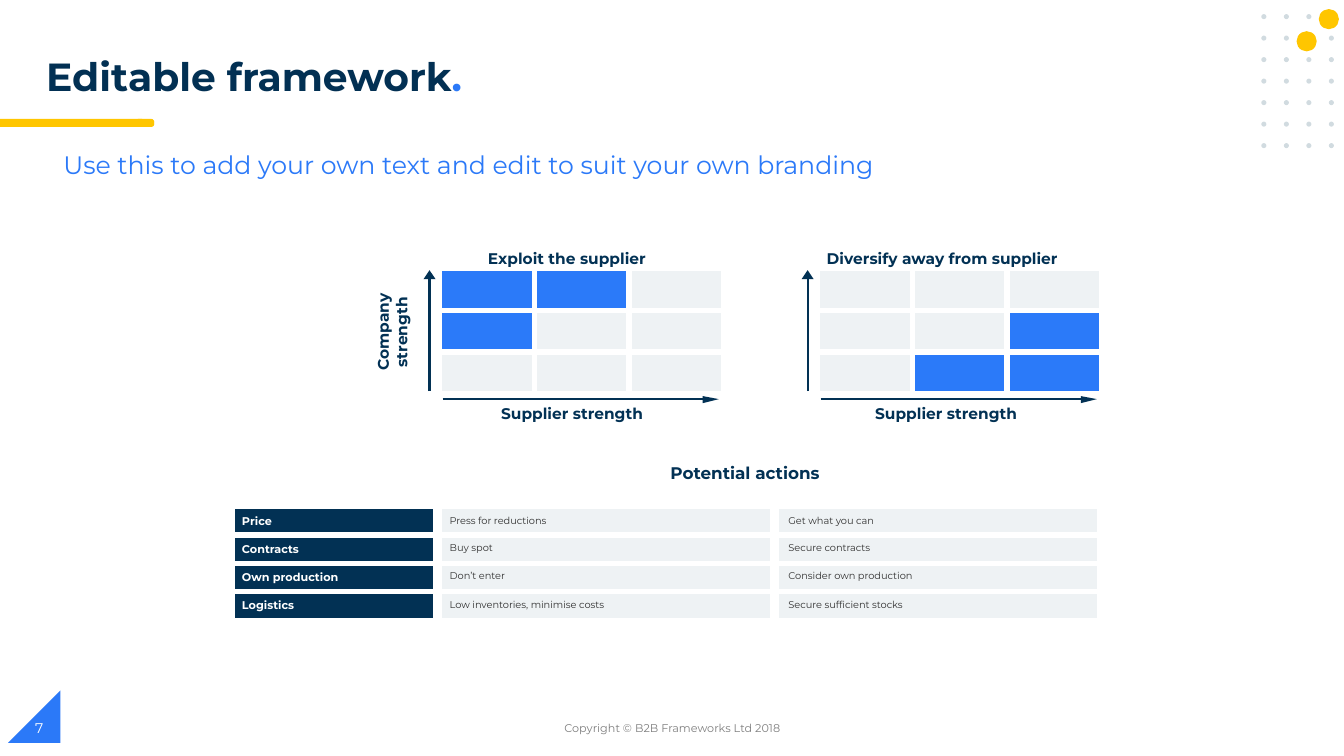
from lxml import etree
from pptx import Presentation
from pptx.dml.color import RGBColor
from pptx.enum.shapes import MSO_CONNECTOR as Conn, MSO_SHAPE as Kind
from pptx.enum.text import MSO_ANCHOR as Anchor, PP_ALIGN as Align
from pptx.oxml import parse_xml
from pptx.oxml.ns import nsdecls, qn
from pptx.util import Inches, Pt

NAVY = RGBColor(0x02, 0x31, 0x54)
INK = RGBColor(0x02, 0x30, 0x53)
BLUE = RGBColor(0x2B, 0x79, 0xF8)
CELL = RGBColor(0x2B, 0x7A, 0xF9)
PALE = RGBColor(0xEE, 0xF2, 0xF4)
GOLD = RGBColor(0xFF, 0xC6, 0x00)
DOT = RGBColor(0xD1, 0xDB, 0xE0)
GREY = RGBColor(0x7F, 0x7F, 0x7F)
DARK = RGBColor(0x33, 0x33, 0x33)
WHITE = RGBColor(0xFF, 0xFF, 0xFF)
FONT = "Montserrat"

# Content
HEAD = {"size": Pt(28), "bold": True}
LABEL = {"size": Pt(11), "bold": True}
PAD = (0.1, 0.05, 0.1, 0.05)
SLIM = (0.01, 0.01, 0, 0)
# runs, box, insets, font values, frame and paragraph values
TEXTS = [
    ([("Editable framework", INK), (".", BLUE)], (0.36, 0.52, 5.64, 0.6),
     PAD, HEAD, {}, {"line_spacing": 0.9}),
    ([("Copyright © B2B Frameworks Ltd 2018", GREY)], (4.42, 7.02, 4.5, 0.4),
     PAD, {"size": Pt(8)}, {"vertical_anchor": Anchor.MIDDLE},
     {"alignment": Align.CENTER}),
    ([("7", WHITE)], (0.25, 7.02, 3, 0.4),
     PAD, {"size": Pt(10)}, {"vertical_anchor": Anchor.MIDDLE}, {}),
    ([("Use this to add your own text and edit to suit your own branding", BLUE)],
     (0.53, 1.43, 8.59, 0.48), PAD, {"size": Pt(18)}, {}, {}),
    ([("Potential actions", NAVY)], (6.64, 4.58, 1.78, 0.21),
     SLIM, {"size": Pt(12), "bold": True}, {}, {}),
]
# left edge, heading and its box, left of axis label, filled cells by row
GRIDS = [
    (4.38, "Exploit the supplier", (4.83, 2.46, 1.83, 0.19), 4.96,
     ("XX.", "X..", "...")),
    (8.13, "Diversify away from supplier", (8.19, 2.46, 2.67, 0.19), 8.67,
     ("...", "..X", ".XX")),
]
AXIS = "Supplier strength"
SIDE = "Company strength"
# left edge, width, indent, fill, font values, rows
LISTS = [
    (2.32, 1.98, 0.08, NAVY, {"size": Pt(8), "bold": True, "color": WHITE},
     ["Price", "Contracts", "Own production", "Logistics"]),
    (4.38, 3.26, 0.08, PALE, {"size": Pt(7), "color": DARK},
     ["Press for reductions", "Buy spot", "Don’t enter",
      "Low inventories, minimise costs"]),
    (7.72, 3.17, 0.1, PALE, {"size": Pt(7), "color": DARK},
     ["Get what you can", "Secure contracts", "Consider own production",
      "Secure sufﬁcient stocks"]),
]
GRID_TOP, LIST_TOP = 2.68, 5.04
GRID_COLS, GRID_ROWS = (0.92, 0.94, 0.92), (0.4, 0.41, 0.4)
LIST_ROWS = (0.27, 0.28, 0.28, 0.27)

deck = Presentation()
deck.slide_width, deck.slide_height = Inches(13.33), Inches(7.5)
slide = deck.slides.add_slide(deck.slide_layouts[6])
shapes = slide.shapes


def style(font, vals):
    font.name = FONT
    for key, val in vals.items():
        if key == "color":
            font.color.rgb = val
        else:
            setattr(font, key, val)


def paint(item, fill):
    item.shadow.inherit = False
    item.fill.solid()
    item.fill.fore_color.rgb = fill
    item.line.fill.background()
    return item


def block(kind, box, fill):
    return paint(shapes.add_shape(kind, *map(Inches, box)), fill)


def write(runs, box, pads, face, frame, para):
    item = shapes.add_textbox(*map(Inches, box))
    body = item.text_frame
    body.word_wrap = True
    for side, pad in zip(("left", "top", "right", "bottom"), pads):
        setattr(body, f"margin_{side}", Inches(pad))
    line = body.paragraphs[0]
    for thing, vals in ((body, frame), (line, para)):
        for key, val in vals.items():
            setattr(thing, key, val)
    for text, tint in runs:
        run = line.add_run()
        run.text = text
        style(run.font, {**face, "color": tint})
    return item


def edge(cell, side):
    cell._tc.get_or_add_tcPr().append(parse_xml(
        f'<a:ln{side} {nsdecls("a")} w="{Pt(4.5)}"><a:solidFill>'
        f'<a:srgbClr val="{WHITE}"/></a:solidFill></a:ln{side}>'))


def table(left, top, cols, rows, fill_at):
    box = map(Inches, (left, top, sum(cols), sum(rows)))
    grid = shapes.add_table(len(rows), len(cols), *box).table
    grid.first_row = grid.horz_banding = False
    for col, wide in zip(grid.columns, cols):
        col.width = Inches(wide)
    for row, high in zip(grid.rows, rows):
        row.height = Inches(high)
    for r in range(len(rows)):
        for c in range(len(cols)):
            cell = grid.cell(r, c)
            # White gaps only between cells
            inner = {"L": c > 0, "R": c < len(cols) - 1,
                     "T": r > 0, "B": r < len(rows) - 1}
            for side, shown in inner.items():
                if shown:
                    edge(cell, side)
            cell.fill.solid()
            cell.fill.fore_color.rgb = fill_at(r, c)
            for side in ("left", "top", "right", "bottom"):
                setattr(cell, f"margin_{side}", 0)
    return grid


def arrow(start, neck, head):
    line = shapes.add_connector(Conn.STRAIGHT, *map(Inches, start + neck))
    line.line.color.rgb = NAVY
    line.line.width = Pt(1.5)
    etree.SubElement(line._element.spPr, qn("a:effectLst"))
    spots = [(Inches(x), Inches(y)) for x, y in head]
    path = shapes.build_freeform(*spots[0])
    path.add_line_segments(spots[1:], close=True)
    paint(path.convert_to_shape(), NAVY)


# Corner, title bar and dots
corner = block(Kind.RIGHT_TRIANGLE, (0.08, 6.85, 0.52, 0.52), BLUE)
corner._element.spPr.find(qn("a:xfrm")).set("flipH", "1")
for top in (1.18, 1.2):
    block(Kind.FLOWCHART_TERMINATOR, (1.34, top, 0.19, 0.06), GOLD)
    block(Kind.RECTANGLE, (0, top, 1.41, 0.06), GOLD)
for r in range(7):
    for c in range(4):
        block(Kind.OVAL, (12.51 + c * 0.67 / 3, 0.14 + r * 1.28 / 6, 0.05, 0.05), DOT)
for left, top in ((13.08, 0.09), (12.86, 0.31)):
    block(Kind.OVAL, (left, top, 0.2, 0.2), GOLD)

# Texts
for entry in TEXTS:
    write(*entry)

# Strength grids with their axes
for left, name, box, mid, marks in GRIDS:
    grid = table(left, GRID_TOP, GRID_COLS, GRID_ROWS,
                 lambda r, c: CELL if marks[r][c] == "X" else PALE)
    for cell in grid.iter_cells():
        style(cell.text_frame.paragraphs[0].font, {"size": Pt(11)})
    x, y = left - 0.12, 2.77
    arrow((x, 3.88), (x, y), [(x, GRID_TOP), (x - 0.06, y), (x + 0.06, y)])
    x, y = left + 2.59, 3.96
    arrow((left + 0.01, y), (x, y), [(x, 3.93), (x, 4), (x + 0.16, y)])
    write([(name, NAVY)], box, SLIM, LABEL, {}, {})
    write([(AXIS, NAVY)], (mid, 4, 1.62, 0.19), SLIM, LABEL, {}, {})
side = write([(SIDE, NAVY)], (3.31, 3.11, 1.16, 0.37), (0, 0, 0, 0),
             LABEL, {}, {"alignment": Align.CENTER})
side.rotation = 270

# Potential actions
for left, wide, indent, fill, face, rows in LISTS:
    grid = table(left, LIST_TOP, (wide,), LIST_ROWS, lambda r, c: fill)
    for cell, text in zip(grid.iter_cells(), rows):
        cell.margin_left, cell.margin_top = Inches(indent), Inches(0.07)
        run = cell.text_frame.paragraphs[0].add_run()
        run.text = text
        style(run.font, face)

deck.save("out.pptx")
